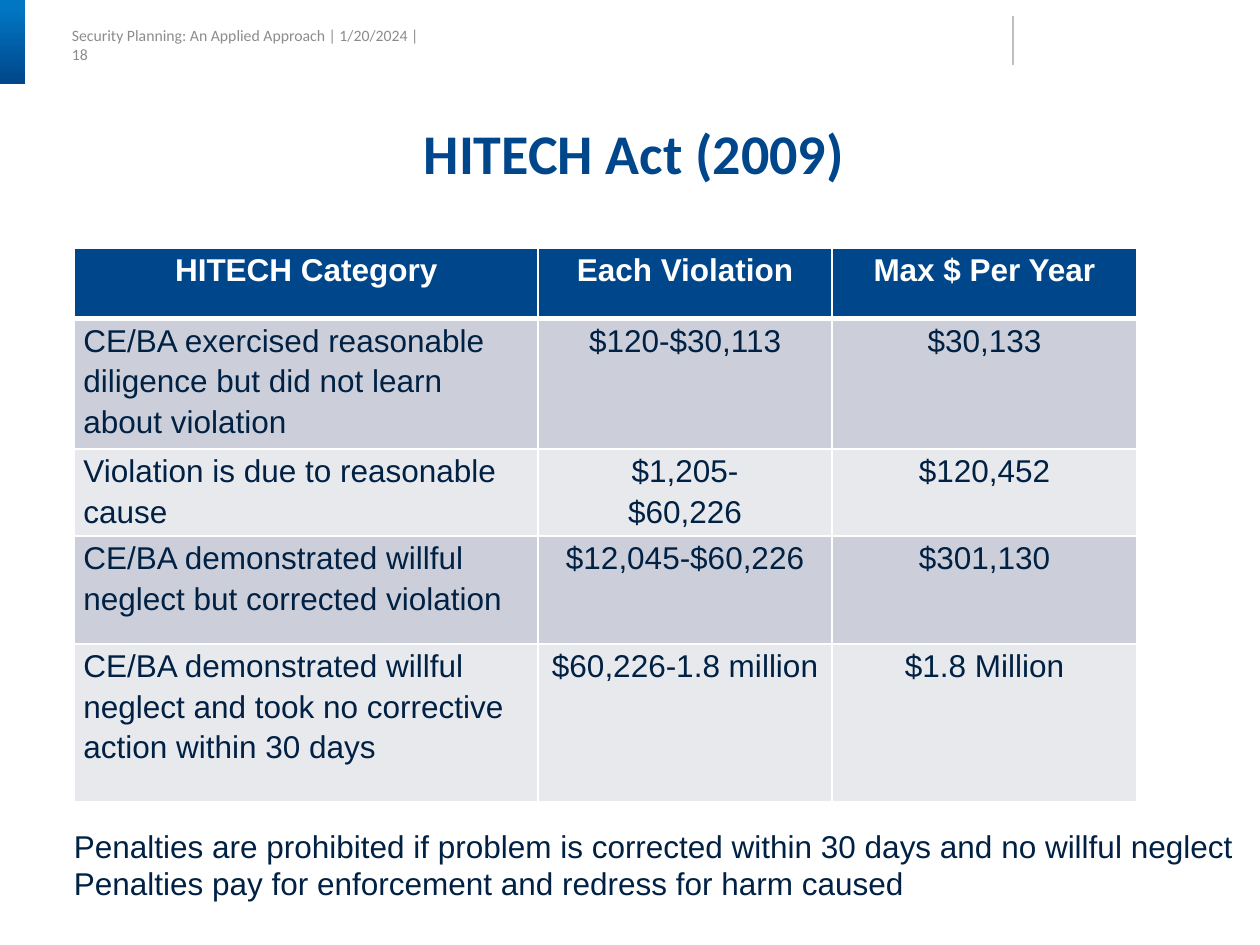
from dataclasses import dataclass

from lxml.etree import SubElement
from pptx import Presentation
from pptx.dml.color import RGBColor
from pptx.enum.shapes import MSO_CONNECTOR, MSO_SHAPE
from pptx.enum.text import MSO_ANCHOR, MSO_AUTO_SIZE, PP_ALIGN
from pptx.oxml.ns import qn
from pptx.util import Cm, Pt


@dataclass(frozen=True)
class Theme:
    navy: str = "00468A"
    sky: str = "0176C3"
    ink: str = "002143"
    gray: str = "8C8C8C"
    rule: str = "BFBFBF"
    white: str = "FFFFFF"
    bands: tuple = ("CCCFDA", "E7E9ED")
    head: str = "Calibri"
    body: str = "Arial"
    small: int = 9
    text: int = 18
    big: int = 32


THEME = Theme()
COLS = (9.35, 5.92, 6.15)
ROWS = (1.42, 2.59, 1.73, 2.18, 3.18)
CELLS = (
    ("HITECH Category", "Each Violation", "Max $ Per Year"),
    ("CE/BA exercised reasonable diligence but did not learn about violation",
     "$120-$30,113", "$30,133"),
    ("Violation is due to reasonable cause", "$1,205-\n$60,226", "$120,452"),
    ("CE/BA demonstrated willful neglect but corrected violation",
     "$12,045-$60,226", "$301,130"),
    ("CE/BA demonstrated willful neglect and took no corrective action "
     "within 30 days", "$60,226-1.8 million", "$1.8 Million"),
)
NOTE = ("Penalties are prohibited if problem is corrected within 30 days "
        "and no willful neglect\n"
        "Penalties pay for enforcement and redress for harm caused")


def apply(item, **form):
    for name, value in form.items():
        setattr(item, name, value)


def write(frame, text, color, font, para=None):
    """Fill a text frame, one paragraph to each line of text."""
    frame.text = text
    for part in frame.paragraphs:
        apply(part, **(para or {}))
        apply(part.font, **font)
        part.font.color.rgb = RGBColor.from_string(color)


def pad(size=0):
    return {f"margin_{side}": Cm(size)
            for side in ("left", "top", "right", "bottom")}


def add_text(slide, spot, text, color, font, para=None, **form):
    frame = slide.shapes.add_textbox(*map(Cm, spot)).text_frame
    apply(frame, **form)
    write(frame, text, color, font, para)


def add_bar(slide, spot):
    bar = slide.shapes.add_shape(MSO_SHAPE.RECTANGLE, *map(Cm, spot))
    bar.shadow.inherit = False
    bar.line.fill.background()
    bar.fill.gradient()
    bar.fill.gradient_angle = 270
    stops = ((0.1, THEME.sky), (1, THEME.navy))
    for stop, (place, color) in zip(bar.fill.gradient_stops, stops):
        stop.position = place
        stop.color.rgb = RGBColor.from_string(color)


def add_rule(slide, ends):
    rule = slide.shapes.add_connector(MSO_CONNECTOR.STRAIGHT, *map(Cm, ends))
    rule.line.width = Pt(0.75)
    rule.line.color.rgb = RGBColor.from_string(THEME.rule)
    SubElement(rule._element.spPr, qn("a:effectLst"))


def add_edges(cell, row):
    """Draw white cell borders, thick between header and body."""
    props = cell._tc.get_or_add_tcPr()
    thick = {0: "lnB", 1: "lnT"}.get(row)
    for side in ("lnL", "lnR", "lnT", "lnB"):
        width = Pt(3 if side == thick else 1)
        line = SubElement(props, qn(f"a:{side}"), w=str(width))
        fill = SubElement(line, qn("a:solidFill"))
        SubElement(fill, qn("a:srgbClr"), val=THEME.white)


def add_grid(slide, left, top):
    table = slide.shapes.add_table(
        len(ROWS), len(COLS), Cm(left), Cm(top),
        Cm(sum(COLS)), Cm(sum(ROWS))).table
    for col, width in zip(table.columns, COLS):
        col.width = Cm(width)
    for r, (height, texts) in enumerate(zip(ROWS, CELLS)):
        table.rows[r].height = Cm(height)
        head = r == 0
        back = THEME.navy if head else THEME.bands[(r - 1) % 2]
        for c, text in enumerate(texts):
            cell = table.cell(r, c)
            apply(cell, margin_left=Cm(0.18), margin_right=Cm(0.18),
                  margin_top=0, margin_bottom=0)
            add_edges(cell, r)
            cell.fill.solid()
            cell.fill.fore_color.rgb = RGBColor.from_string(back)
            align = PP_ALIGN.CENTER if head or c else PP_ALIGN.LEFT
            write(cell.text_frame, text, THEME.white if head else THEME.ink,
                  dict(name=THEME.body, size=Pt(THEME.text), bold=head),
                  dict(alignment=align, line_spacing=1.15))


def main():
    deck = Presentation()
    apply(deck, slide_width=Cm(25.4), slide_height=Cm(19.05))
    slide = deck.slides.add_slide(deck.slide_layouts[6])
    add_text(slide, (1.45, 0.61, 7.21, 0.58),
             "Security Planning: An Applied Approach | 1/20/2024 | 18",
             THEME.gray, dict(name=THEME.head, size=Pt(THEME.small)),
             word_wrap=False, vertical_anchor=MSO_ANCHOR.MIDDLE, **pad())
    add_bar(slide, (0, 0, 0.51, 1.7))
    add_rule(slide, (20.42, 0.33, 20.42, 1.32))
    add_text(slide, (1.45, 2.54, 22.66, 1.22), "HITECH Act (2009)",
             THEME.navy,
             dict(name=THEME.head, size=Pt(THEME.big), bold=True),
             dict(alignment=PP_ALIGN.CENTER, line_spacing=0.9),
             word_wrap=True, auto_size=MSO_AUTO_SIZE.SHAPE_TO_FIT_TEXT,
             **pad())
    add_text(slide, (1.24, 16.54, 24.1, 1.8), NOTE, THEME.ink,
             dict(name=THEME.body, size=Pt(THEME.text)),
             word_wrap=False, auto_size=MSO_AUTO_SIZE.SHAPE_TO_FIT_TEXT)
    add_grid(slide, 1.5, 5)
    deck.save("out.pptx")


if __name__ == "__main__":
    main()
